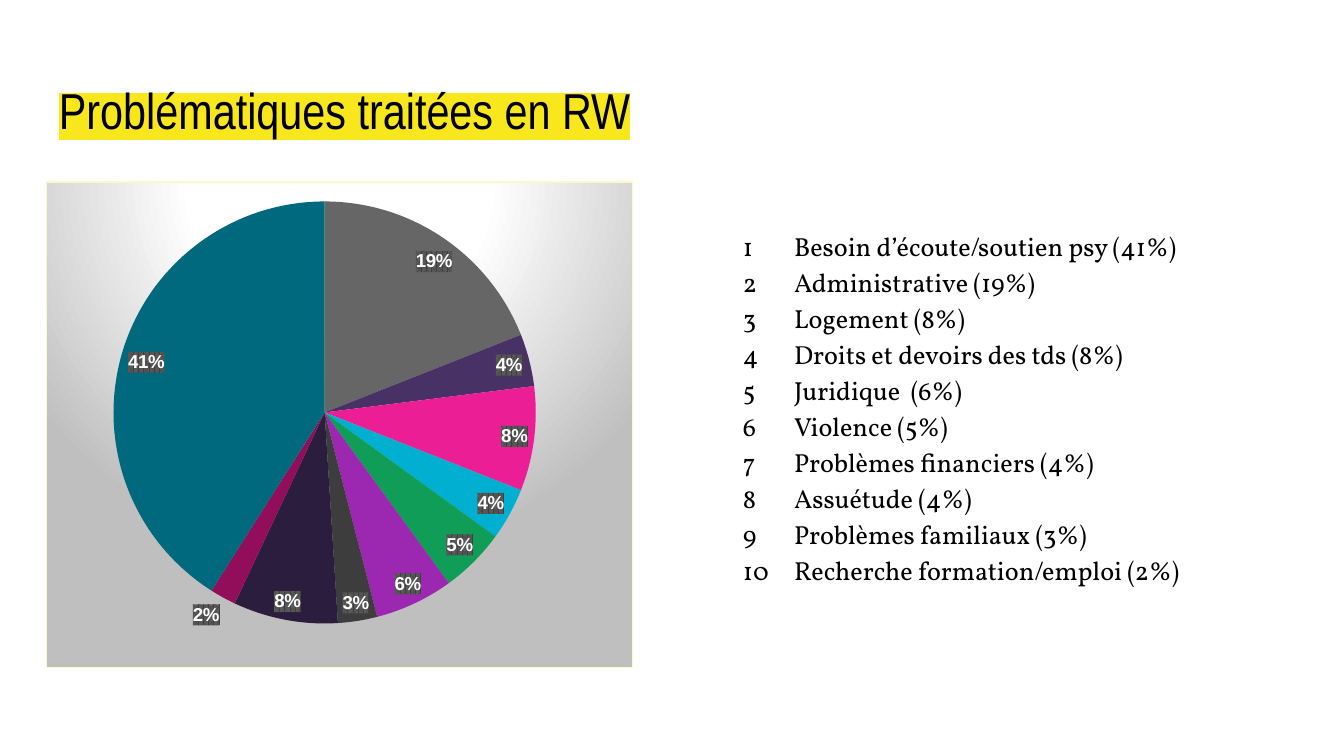
import lxml.etree
import pptx
import pptx.chart.data
import pptx.dml.color
import pptx.enum.chart
import pptx.enum.text
import pptx.oxml
import pptx.oxml.ns
import pptx.util
from pptx.util import Inches

RGBColor = pptx.dml.color.RGBColor
BLACK = RGBColor(0x00, 0x00, 0x00)
WHITE = RGBColor(0xFF, 0xFF, 0xFF)
YELLOW = RGBColor(0xF8, 0xE7, 0x1C)
PALE_YELLOW = RGBColor(0xFD, 0xF9, 0xC6)
SILVER = RGBColor(0xBF, 0xBF, 0xBF)
LABEL_DARK = RGBColor(0x40, 0x40, 0x40)
LABEL_LIGHT = RGBColor(0x59, 0x59, 0x59)

SLICES = [
    (19, RGBColor(0x66, 0x66, 0x66)),
    (4, RGBColor(0x48, 0x31, 0x65)),
    (8, RGBColor(0xEB, 0x1E, 0x95)),
    (4, RGBColor(0x01, 0xAF, 0xD1)),
    (5, RGBColor(0x0F, 0x9D, 0x58)),
    (6, RGBColor(0x9C, 0x27, 0xB0)),
    (3, RGBColor(0x3D, 0x3D, 0x3D)),
    (8, RGBColor(0x2B, 0x1D, 0x3D)),
    (2, RGBColor(0x92, 0x0D, 0x5A)),
    (41, RGBColor(0x01, 0x69, 0x7D)),
]
ISSUES = [
    "Besoin d’écoute/soutien psy (41%)",
    "Administrative (19%)",
    "Logement (8%)",
    "Droits et devoirs des tds (8%)",
    "Juridique  (6%)",
    "Violence (5%)",
    "Problèmes financiers (4%)",
    "Assuétude (4%)",
    "Problèmes familiaux (3%)",
    "Recherche formation/emploi (2%)",
]


def xml(markup):
    """Parse one element, declaring the drawing and chart namespaces on it."""
    tag, rest = markup.split(">", 1)
    return pptx.oxml.parse_xml(f"{tag} {pptx.oxml.ns.nsdecls('a', 'c')}>{rest}")


def add_run(paragraph, text, font_name, size):
    run = paragraph.add_run()
    run.text = text
    run.font.name = font_name
    run.font.size = pptx.util.Pt(size)
    run.font.color.rgb = BLACK
    return run


deck = pptx.Presentation()
deck.slide_width = Inches(10)
deck.slide_height = Inches(10) * 9 // 16
slide = deck.slides.add_slide(deck.slide_layouts[6])

# Title
title = slide.shapes.add_textbox(Inches(0.34), Inches(0.49), Inches(9.32), Inches(0.63)).text_frame
title.word_wrap = True
title.vertical_anchor = pptx.enum.text.MSO_ANCHOR.BOTTOM
title.margin_top = Inches(0.1)
title.margin_bottom = Inches(0.08)
title_run = add_run(title.paragraphs[0], "Problématiques traitées en RW", "Arial Narrow", 27)
title_run.font.fill._xPr.find(pptx.oxml.ns.qn("a:solidFill")).addnext(
    xml(f'<a:highlight><a:srgbClr val="{YELLOW}"/></a:highlight>'))

# Numbered issues
issues = slide.shapes.add_textbox(Inches(5.28), Inches(1.35), Inches(4.37), Inches(3.65)).text_frame
issues.word_wrap = True
issues.margin_top = Inches(0.33)
for index, issue in enumerate(ISSUES):
    paragraph = issues.add_paragraph() if index else issues.paragraphs[0]
    paragraph.line_spacing = 1.15
    add_run(paragraph, issue, "Vollkorn", 14)
    properties = paragraph._p.get_or_add_pPr()
    properties.set("marL", str(Inches(0.53)))
    properties.set("indent", str(Inches(-0.38)))
    properties.append(xml(f'<a:buClr><a:srgbClr val="{BLACK}"/></a:buClr>'))
    properties.append(xml('<a:buFont typeface="Vollkorn"></a:buFont>'))
    properties.append(xml('<a:buAutoNum type="arabicPlain"></a:buAutoNum>'))

# Pie of shares
shares = pptx.chart.data.CategoryChartData()
shares.categories = [str(number) for number in range(1, len(SLICES) + 1)]
shares.add_series("Series 1", [share for share, _ in SLICES])
chart = slide.shapes.add_chart(
    pptx.enum.chart.XL_CHART_TYPE.PIE,
    Inches(0.34), Inches(1.35), Inches(4.37), Inches(3.62), shares).chart
chart.has_title = False
chart.has_legend = False
chart.font.name = "Arial"
chart.font.size = pptx.util.Pt(10)
chart.font.color.rgb = YELLOW

pie = chart.plots[0]
pie.vary_by_categories = True
for index, (_, color) in enumerate(SLICES):
    slice_format = pie.series[0].points[index].format
    slice_format.fill.solid()
    slice_format.fill.fore_color.rgb = color
    slice_format.line.fill.background()

labels = pie.series[0].data_labels
labels.show_percentage = True
labels.show_value = False
labels.number_format = "0%"
labels.number_format_is_linked = False
labels.position = pptx.enum.chart.XL_LABEL_POSITION.BEST_FIT
labels.font.name = "Arial"
labels.font.size = pptx.util.Pt(10)
labels.font.bold = True
labels.font.color.rgb = WHITE
labels._element.find(pptx.oxml.ns.qn("c:txPr")).addprevious(xml(
    '<c:spPr><a:pattFill prst="pct75">'
    f'<a:fgClr><a:srgbClr val="{LABEL_DARK}"/></a:fgClr>'
    f'<a:bgClr><a:srgbClr val="{LABEL_LIGHT}"/></a:bgClr>'
    '</a:pattFill><a:ln><a:noFill/></a:ln></c:spPr>'))

plot_area = chart._chartSpace.chart.plotArea
for layout in plot_area.findall(pptx.oxml.ns.qn("c:layout")):
    plot_area.remove(layout)
plot_area.insert(0, xml(
    '<c:layout><c:manualLayout><c:layoutTarget val="inner"/>'
    '<c:xMode val="edge"/><c:yMode val="edge"/>'
    '<c:x val="0.11"/><c:y val="0.04"/><c:w val="0.73"/><c:h val="0.87"/>'
    '</c:manualLayout></c:layout>'))

# Radial backdrop, white above and silver below
stops = "".join(
    f'<a:gs pos="{position * 1000}"><a:srgbClr val="{color}"/></a:gs>'
    for position, color in [(0, WHITE), (39, WHITE), (100, SILVER)])
chart._chartSpace.chart.addnext(xml(
    f'<c:spPr><a:gradFill><a:gsLst>{stops}</a:gsLst><a:path path="circle">'
    '<a:fillToRect l="50000" t="-80000" r="50000" b="180000"/></a:path></a:gradFill>'
    f'<a:ln w="{pptx.util.Pt(0.75)}"><a:solidFill><a:srgbClr val="{PALE_YELLOW}"/>'
    '</a:solidFill></a:ln></c:spPr>'))

deck.save("out.pptx")
